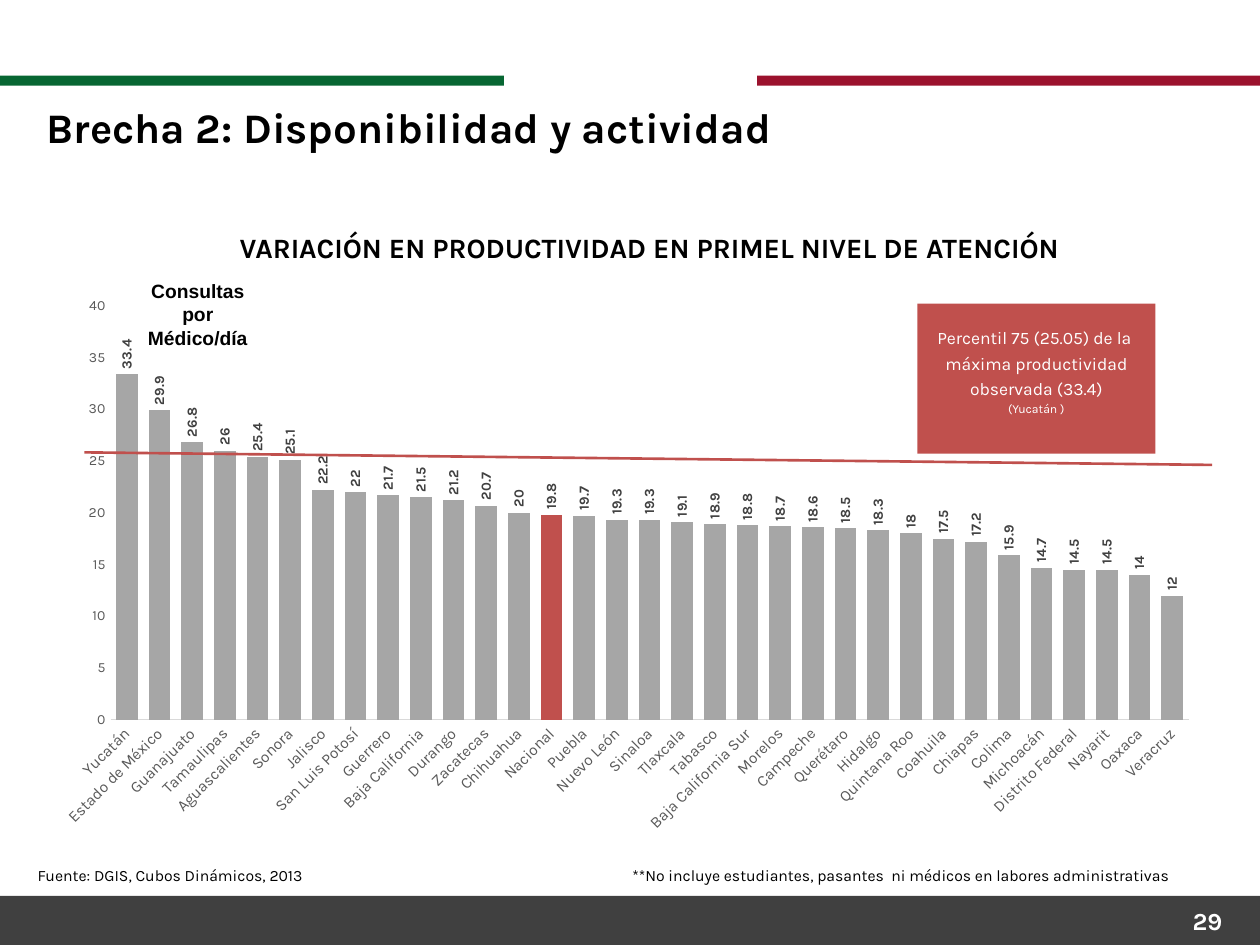
from dataclasses import dataclass

from lxml.etree import SubElement
from pptx import Presentation
from pptx.chart.data import CategoryChartData
from pptx.dml.color import RGBColor
from pptx.enum.chart import XL_CHART_TYPE as ChartType
from pptx.enum.chart import XL_LABEL_POSITION as LabelPos
from pptx.enum.chart import XL_TICK_MARK as Tick
from pptx.enum.shapes import MSO_CONNECTOR as Connector
from pptx.enum.shapes import MSO_SHAPE as Shape
from pptx.enum.text import MSO_ANCHOR as Anchor
from pptx.enum.text import PP_ALIGN as Align
from pptx.oxml import parse_xml
from pptx.oxml.ns import nsdecls, qn
from pptx.util import Inches, Pt

BLACK = RGBColor(0x00, 0x00, 0x00)
WHITE = RGBColor(0xFF, 0xFF, 0xFF)
DARK = RGBColor(0x40, 0x40, 0x40)
AXIS_TEXT = RGBColor(0x59, 0x59, 0x59)
AXIS_LINE = RGBColor(0xD9, 0xD9, 0xD9)
BAR = RGBColor(0xA6, 0xA6, 0xA6)
RED = RGBColor(0xC0, 0x50, 0x4D)
GREEN = RGBColor(0x07, 0x66, 0x32)
CRIMSON = RGBColor(0x9B, 0x12, 0x2D)
FONT = "Karla"
SLIDE_W, SLIDE_H = Inches(10), Inches(7.5)
HIGHLIGHT = "Nacional"

PRODUCTIVITY = {
    "Yucatán": 33.4, "Estado de México": 29.9, "Guanajuato": 26.8,
    "Tamaulipas": 26, "Aguascalientes": 25.4, "Sonora": 25.1,
    "Jalisco": 22.2, "San Luis Potosí": 22, "Guerrero": 21.7,
    "Baja California": 21.5, "Durango": 21.2, "Zacatecas": 20.7,
    "Chihuahua": 20, "Nacional": 19.8, "Puebla": 19.7,
    "Nuevo León": 19.3, "Sinaloa": 19.3, "Tlaxcala": 19.1,
    "Tabasco": 18.9, "Baja California Sur": 18.8, "Morelos": 18.7,
    "Campeche": 18.6, "Querétaro": 18.5, "Hidalgo": 18.3,
    "Quintana Roo": 18, "Coahuila": 17.5, "Chiapas": 17.2,
    "Colima": 15.9, "Michoacán": 14.7, "Distrito Federal": 14.5,
    "Nayarit": 14.5, "Oaxaca": 14, "Veracruz": 12,
}


@dataclass(frozen=True)
class Box:
    """Position and size as percentages of the slide."""
    x: float
    y: float
    w: float
    h: float

    def emu(self) -> tuple[int, int, int, int]:
        return (across(self.x), down(self.y), across(self.w), down(self.h))


@dataclass(frozen=True)
class Band:
    box: Box
    color: RGBColor


@dataclass(frozen=True)
class Label:
    text: str
    box: Box
    size: float
    bold: bool = False
    align: Align = Align.LEFT
    color: RGBColor = BLACK
    font: str = FONT


BANDS = [
    Band(Box(0, 94.8, 100, 5.2), DARK),
    Band(Box(0, 8, 40, 1.07), GREEN),
    Band(Box(60.1, 8, 39.9, 1.07), CRIMSON),
]
LABELS = [
    Label("VARIACIÓN EN PRODUCTIVIDAD EN PRIMEL NIVEL DE ATENCIÓN",
          Box(4.7, 23.73, 93.7, 9.47), 16, True, Align.CENTER),
    Label("Fuente: DGIS, Cubos Dinámicos, 2013",
          Box(2, 90.93, 42.5, 3.33), 9),
    Label("**No incluye estudiantes, pasantes  ni médicos en labores administrativas",
          Box(49.2, 90.93, 50.8, 3.33), 9),
    Label("Consultas por Médico/día",
          Box(9.8, 28.93, 11.8, 8.8), 11, True, Align.CENTER, font="Arial"),
    Label("Brecha 2: Disponibilidad y actividad",
          Box(2.7, 10.13, 95.3, 12.13), 24, True),
    Label("29", Box(74.7, 95.2, 23.3, 5.33), 14, True, Align.RIGHT, WHITE),
]
CALLOUT = [
    ("Percentil 75 (25.05) de la ", 10),
    ("máxima productividad", 10),
    ("observada (33.4)", 10),
    ("(Yucatán )", 7),
]


def across(share: float) -> int:
    return round(SLIDE_W * share / 100)


def down(share: float) -> int:
    return round(SLIDE_H * share / 100)


def style(font, size: float, color: RGBColor, bold: bool = False, name: str = FONT) -> None:
    font.name, font.size, font.bold = name, Pt(size), bold
    font.color.rgb = color


def add_rect(slide, box: Box, color: RGBColor):
    s = slide.shapes.add_shape(Shape.RECTANGLE, *box.emu())
    s.shadow.inherit = False
    s.fill.solid()
    s.fill.fore_color.rgb = color
    s.line.fill.background()
    return s


def add_label(slide, label: Label) -> None:
    tf = slide.shapes.add_textbox(*label.box.emu()).text_frame
    tf.word_wrap = True
    p = tf.paragraphs[0]
    p.text, p.alignment = label.text, label.align
    style(p.font, label.size, label.color, label.bold, label.font)


def add_callout(slide, box: Box) -> None:
    tf = add_rect(slide, box, RED).text_frame
    tf.word_wrap = True
    tf.vertical_anchor = Anchor.MIDDLE
    tf.margin_bottom = Inches(0.19)
    for i, (text, size) in enumerate(CALLOUT):
        p = tf.add_paragraph() if i else tf.paragraphs[0]
        p.text, p.alignment, p.line_spacing = text, Align.CENTER, 1.2
        style(p.font, size, WHITE)


def add_threshold(slide, x1: float, y1: float, x2: float, y2: float) -> None:
    s = slide.shapes.add_connector(
        Connector.STRAIGHT, across(x1), down(y1), across(x2), down(y2))
    s.line.color.rgb = RED
    s.line.width = Pt(1.5)
    SubElement(s._element.spPr, qn("a:effectLst"))


def rotate_text(element, degrees: int) -> None:
    body = element.find(qn("c:txPr")).find(qn("a:bodyPr"))
    body.set("rot", str(degrees * 60000))
    body.set("vert", "horz")


def set_plot_area(chart, x: float, y: float, w: float, h: float) -> None:
    area = chart._chartSpace.chart.plotArea
    for old in area.findall(qn("c:layout")):
        area.remove(old)
    sizes = "".join(f'<c:{k} val="{v}"/>' for k, v in zip("xywh", (x, y, w, h)))
    area.insert(0, parse_xml(
        f'<c:layout {nsdecls("c")}><c:manualLayout><c:layoutTarget val="inner"/>'
        f'<c:xMode val="edge"/><c:yMode val="edge"/>{sizes}'
        "</c:manualLayout></c:layout>"))


def add_productivity_chart(slide, box: Box) -> None:
    data = CategoryChartData()
    data.categories = list(PRODUCTIVITY)
    data.add_series("Series 1", list(PRODUCTIVITY.values()))
    chart = slide.shapes.add_chart(ChartType.COLUMN_CLUSTERED, *box.emu(), data).chart
    chart.has_legend = chart.has_title = False
    style(chart.font, 8, BLACK)
    set_plot_area(chart, 0.06, 0.04, 0.92, 0.74)

    cats, vals = chart.category_axis, chart.value_axis
    for axis, size in ((cats, 9), (vals, 8)):
        axis.major_tick_mark = axis.minor_tick_mark = Tick.NONE
        axis.has_major_gridlines = False
        style(axis.tick_labels.font, size, AXIS_TEXT)
    cats.format.line.color.rgb = AXIS_LINE
    cats.format.line.width = Pt(0.75)
    rotate_text(cats._element, -45)
    vals.format.line.fill.background()
    vals.minimum_scale, vals.maximum_scale, vals.major_unit = 0, 40, 5

    plot = chart.plots[0]
    plot.gap_width, plot.vary_by_categories = 50, False
    series = plot.series[0]
    point = series.points[list(PRODUCTIVITY).index(HIGHLIGHT)]
    for part, color in ((series, BAR), (point, RED)):
        part.format.fill.solid()
        part.format.fill.fore_color.rgb = color
    labels = series.data_labels
    labels.show_value, labels.position = True, LabelPos.OUTSIDE_END
    style(labels.font, 8, DARK, True)
    rotate_text(labels._element, -90)


def main() -> None:
    prs = Presentation()
    prs.slide_width, prs.slide_height = SLIDE_W, SLIDE_H
    slide = prs.slides.add_slide(prs.slide_layouts[6])
    for band in BANDS:
        add_rect(slide, band.box, band.color)
    add_productivity_chart(slide, Box(3.2, 30, 93, 59.2))
    add_callout(slide, Box(72.8, 32.13, 18.9, 15.87))
    add_threshold(slide, 6.7, 47.87, 96.2, 49.2)
    for label in LABELS:
        add_label(slide, label)
    prs.save("out.pptx")


if __name__ == "__main__":
    main()
